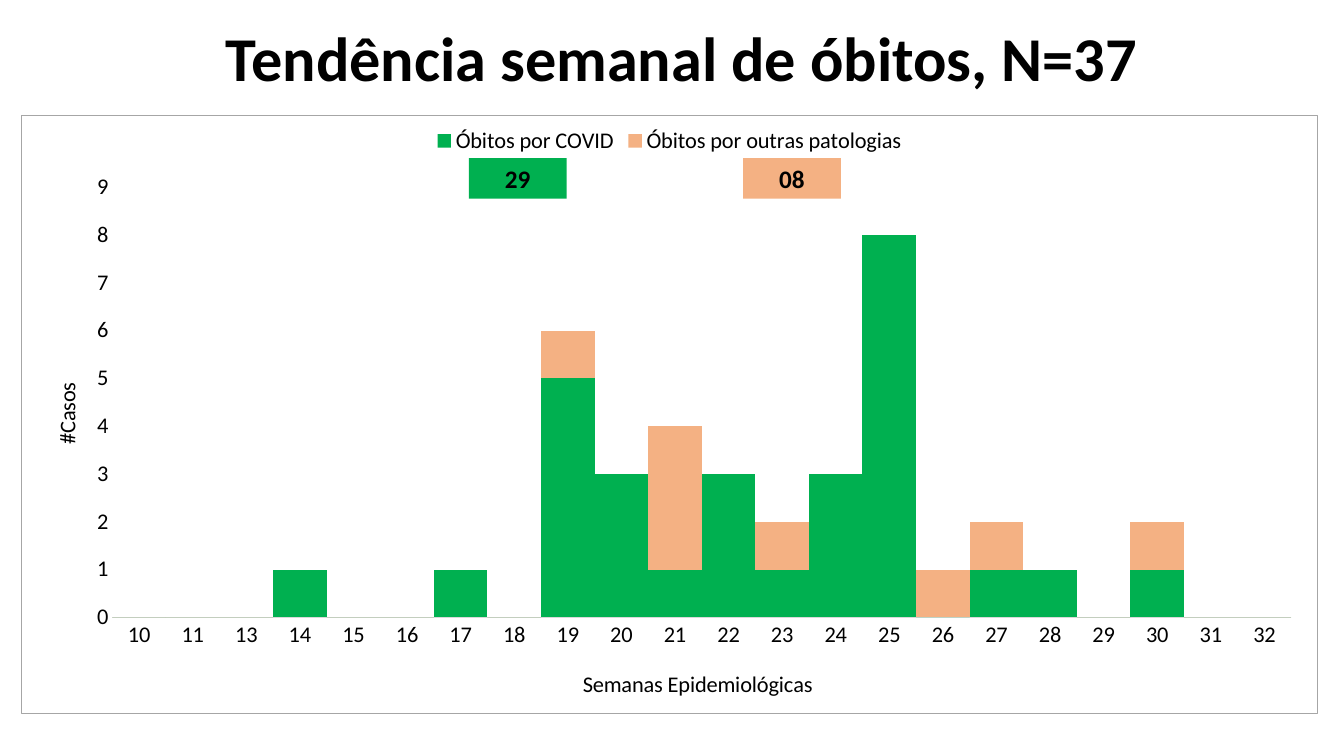
from dataclasses import dataclass

from lxml import etree
from pptx import Presentation
from pptx.chart.data import CategoryChartData
from pptx.dml.color import RGBColor
from pptx.enum.chart import XL_CHART_TYPE, XL_LEGEND_POSITION, XL_TICK_MARK
from pptx.enum.shapes import MSO_SHAPE
from pptx.enum.text import MSO_ANCHOR, PP_ALIGN
from pptx.oxml import parse_xml
from pptx.oxml.ns import nsdecls, qn
from pptx.util import Emu, Pt

STACKED = XL_CHART_TYPE.COLUMN_STACKED
LEGEND_TOP = XL_LEGEND_POSITION.TOP
NO_TICK = XL_TICK_MARK.NONE
RECTANGLE = MSO_SHAPE.RECTANGLE
BOTTOM, MIDDLE = MSO_ANCHOR.BOTTOM, MSO_ANCHOR.MIDDLE
CENTER = PP_ALIGN.CENTER


@dataclass(frozen=True)
class Theme:
    font: str = "Calibri"
    text: str = "000000"
    covid: str = "00B050"
    other: str = "F4B183"
    axis: str = "D9D9D9"
    border: str = "A6A6A6"
    title_size: float = 44.5
    chart_size: int = 16
    total_size: int = 18
    line_width: float = 0.75


THEME = Theme()
TITLE = "Tendência semanal de óbitos, N=37"
WEEK_AXIS = "Semanas Epidemiológicas"
CASE_AXIS = "#Casos"
WEEKS = [10, 11, *range(13, 33)]
SERIES = [
    ("Óbitos por COVID", THEME.covid,
     [0, 0, 0, 1, 0, 0, 1, 0, 5, 3, 1, 3, 1, 3, 8, 0, 1, 1, 0, 1, 0, 0]),
    ("Óbitos por outras patologias", THEME.other,
     [0, 0, 0, 0, 0, 0, 0, 0, 1, 0, 3, 0, 1, 0, 0, 1, 1, 0, 0, 1, 0, 0]),
]
TOTALS = [("29", THEME.covid, 465), ("08", THEME.other, 737)]

EMU_PER_PX = 9144
SLIDE_SIZE = (1333, 750)
TITLE_BOX = (58, 26, 1237, 70)
CHART_BOX = (21, 114, 1286, 594)
TOTAL_TOP, TOTAL_WIDTH, TOTAL_HEIGHT = 157, 97, 40
PLOT_LAYOUT = {"x": 0.07, "y": 0.12, "w": 0.91, "h": 0.72}
WEEK_TITLE_LAYOUT = {"x": 0.43, "y": 0.92}
CASE_TITLE_LAYOUT = {"x": 0.02, "y": 0.44}


def px(*lengths):
    return [Emu(length * EMU_PER_PX) for length in lengths]


def style_font(font, size, bold=False):
    font.name = THEME.font
    font.size = Pt(size)
    font.bold = bold
    font.color.rgb = RGBColor.from_string(THEME.text)


def fill_solid(fill, color):
    fill.solid()
    fill.fore_color.rgb = RGBColor.from_string(color)


def set_text(shape, text, size, anchor):
    frame = shape.text_frame
    frame.text = text
    frame.word_wrap = True
    frame.vertical_anchor = anchor
    paragraph = frame.paragraphs[0]
    paragraph.alignment = CENTER
    style_font(paragraph.runs[0].font, size, True)
    return paragraph


def set_layout(parent, position, index, inner=False):
    current = parent.find(qn("c:layout"))
    if current is not None:
        parent.remove(current)
    layout = parse_xml(f"<c:layout {nsdecls('c')}/>")
    manual = etree.SubElement(layout, qn("c:manualLayout"))
    if inner:
        etree.SubElement(manual, qn("c:layoutTarget")).set("val", "inner")
    for name in ("x", "y"):
        etree.SubElement(manual, qn(f"c:{name}Mode")).set("val", "edge")
    for name, value in position.items():
        etree.SubElement(manual, qn(f"c:{name}")).set("val", str(value))
    parent.insert(index, layout)


def style_axis(axis, title, position):
    axis.has_major_gridlines = False
    axis.major_tick_mark = axis.minor_tick_mark = NO_TICK
    style_font(axis.tick_labels.font, THEME.chart_size)
    frame = axis.axis_title.text_frame
    frame.text = title
    style_font(frame.paragraphs[0].runs[0].font, THEME.chart_size)
    set_layout(frame._txBody.getparent().getparent(), position, 1)


def frame_chart(chart):
    space = chart._chartSpace
    corners = space.find(qn("c:roundedCorners"))
    if corners is None:
        corners = parse_xml(f"<c:roundedCorners {nsdecls('c')}/>")
        date = space.find(qn("c:date1904"))
        space.insert(0 if date is None else 1, corners)
    corners.set("val", "0")
    space.find(qn("c:chart")).addnext(parse_xml(
        f'<c:spPr {nsdecls("c", "a")}><a:noFill/>'
        f'<a:ln w="{Pt(THEME.line_width)}"><a:solidFill>'
        f'<a:srgbClr val="{THEME.border}"/></a:solidFill></a:ln></c:spPr>'))


def add_deaths_chart(slide):
    data = CategoryChartData(number_format="#,##0")
    data.categories = [str(week) for week in WEEKS]
    for name, _, values in SERIES:
        data.add_series(name, values)
    chart = slide.shapes.add_chart(STACKED, *px(*CHART_BOX), data).chart
    chart.has_title = False
    style_font(chart.font, THEME.chart_size)
    chart.has_legend = True
    chart.legend.position = LEGEND_TOP
    chart.legend.include_in_layout = False
    style_font(chart.legend.font, THEME.chart_size)

    plot = chart.plots[0]
    plot.gap_width = 0
    plot.overlap = 100
    plot.vary_by_categories = False
    for series, (_, color, _) in zip(plot.series, SERIES):
        fill_solid(series.format.fill, color)

    style_axis(chart.category_axis, WEEK_AXIS, WEEK_TITLE_LAYOUT)
    line = chart.category_axis.format.line
    fill_solid(line.fill, THEME.axis)
    line.width = Pt(THEME.line_width)

    cases = chart.value_axis
    style_axis(cases, CASE_AXIS, CASE_TITLE_LAYOUT)
    cases.minimum_scale, cases.maximum_scale, cases.major_unit = 0, 9, 1
    cases.tick_labels.number_format = "#,##0"
    cases.tick_labels.number_format_is_linked = False
    cases.format.line.fill.background()

    set_layout(chart._chartSpace.chart.plotArea, PLOT_LAYOUT, 0, inner=True)
    frame_chart(chart)


def add_total(slide, text, color, left):
    box = px(left, TOTAL_TOP, TOTAL_WIDTH, TOTAL_HEIGHT)
    shape = slide.shapes.add_shape(RECTANGLE, *box)
    shape.shadow.inherit = False
    fill_solid(shape.fill, color)
    shape.line.fill.background()
    set_text(shape, text, THEME.total_size, MIDDLE)


def main():
    presentation = Presentation()
    presentation.slide_width, presentation.slide_height = px(*SLIDE_SIZE)
    slide = presentation.slides.add_slide(presentation.slide_layouts[5])
    title = slide.shapes.title
    title.left, title.top, title.width, title.height = px(*TITLE_BOX)
    set_text(title, TITLE, THEME.title_size, BOTTOM).line_spacing = 0.7
    add_deaths_chart(slide)
    for total in TOTALS:
        add_total(slide, *total)
    presentation.save("out.pptx")


if __name__ == "__main__":
    main()
